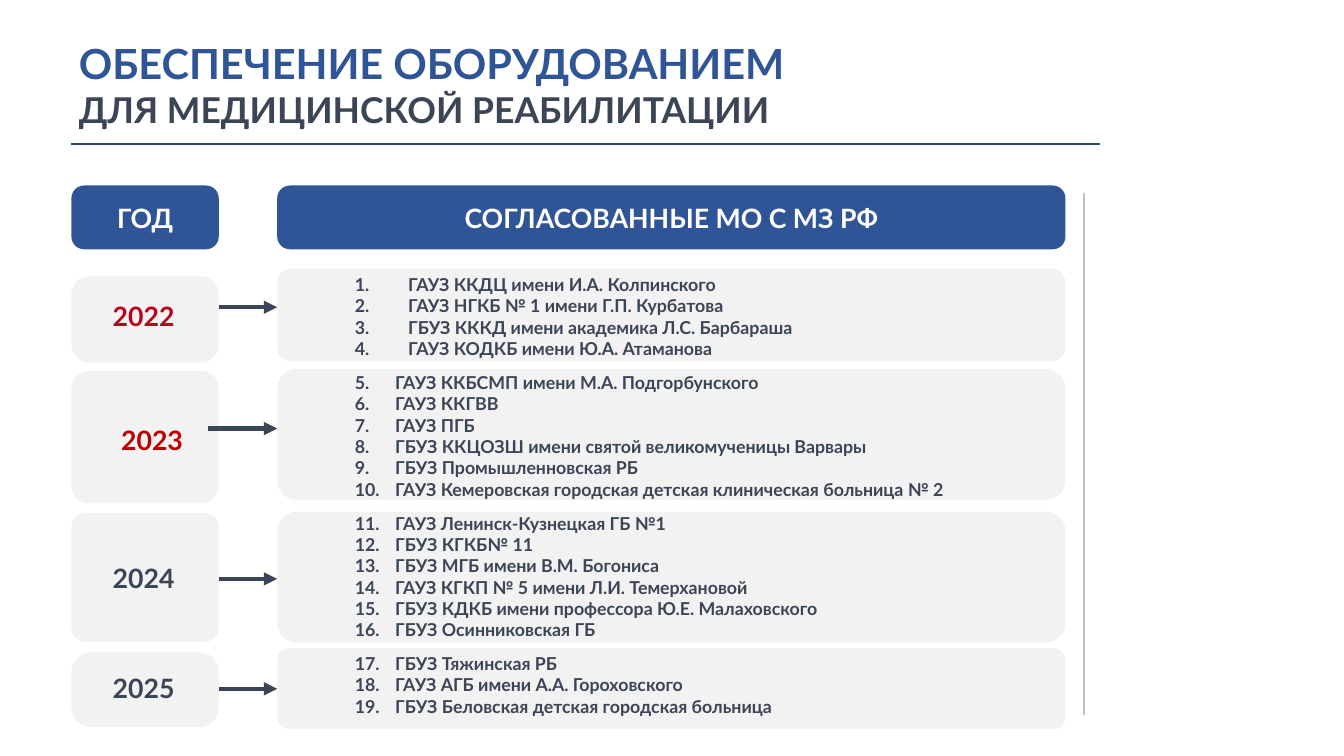
import pptx
import pptx.util
import pptx.dml.color
import pptx.enum.shapes
import pptx.enum.text
import pptx.oxml
import pptx.oxml.ns
import collections
import dataclasses

Cm, Pt = pptx.util.Cm, pptx.util.Pt
Align = pptx.enum.text.PP_ALIGN
Mid = pptx.enum.text.MSO_ANCHOR.MIDDLE


@dataclasses.dataclass
class Theme:
    font: str = "Lato"
    blue: str = "2F5597"
    rule: str = "284678"
    dark: str = "3B4555"
    red: str = "B9031D"
    brick: str = "BC0000"
    pale: str = "F2F2F2"
    gray: str = "BFBFBF"
    white: str = "FFFFFF"
    big: int = 28
    sub: int = 24
    head: int = 18
    item: int = 12


Row = collections.namedtuple("Row", "year color top high card tall round x y arrow over indent items")


def color(code):
    return pptx.dml.color.RGBColor.from_string(code)


def tag(parent, name, **attrs):
    node = pptx.oxml.ns.qn(name)
    return pptx.oxml.xmlchemy.etree.SubElement(parent, node, attrs)


def write(frame, text, size, ink, font, align=Align.LEFT, first=True, start=None, indent=0):
    """Add one bold paragraph, numbered when start is given."""
    para = frame.paragraphs[0] if first else frame.add_paragraph()
    para.alignment = align
    run = para.add_run()
    run.text = text
    run.font.name, run.font.size, run.font.bold = font, Pt(size), True
    run.font.color.rgb = color(ink)
    if start:
        props = para._p.get_or_add_pPr()
        props.set("marL", str(Cm(indent)))
        props.set("indent", str(-Cm(indent)))
        tag(props, "a:buFont", typeface="+mj-lt")
        tag(props, "a:buAutoNum", type="arabicPeriod", startAt=str(start))


class Page:
    def __init__(self, deck, theme):
        self.theme = theme
        self.shapes = deck.slides.add_slide(deck.slide_layouts[6]).shapes

    def card(self, x, y, w, h, fill, bend, text=None):
        kind = pptx.enum.shapes.MSO_SHAPE.ROUNDED_RECTANGLE
        shape = self.shapes.add_shape(kind, Cm(x), Cm(y), Cm(w), Cm(h))
        shape.adjustments[0] = bend
        shape.shadow.inherit = False
        shape.fill.solid()
        shape.fill.fore_color.rgb = color(fill)
        shape.line.fill.background()
        if text:
            shape.text_frame.vertical_anchor = Mid
            write(shape.text_frame, text, self.theme.head, self.theme.white,
                  self.theme.font, align=Align.CENTER)

    def line(self, x1, y1, x2, y2, ink, width, arrow=False):
        kind = pptx.enum.shapes.MSO_CONNECTOR.STRAIGHT
        line = self.shapes.add_connector(kind, Cm(x1), Cm(y1), Cm(x2), Cm(y2))
        line.line.color.rgb = color(ink)
        line.line.width = Pt(width)
        if arrow:
            tag(line.line._get_or_add_ln(), "a:tailEnd", type="triangle")
        tag(line._element.spPr, "a:effectLst")

    def text(self, x, y, w, h, lines, **form):
        """Each line is (text, size, colour); start numbers the lines."""
        frame = self.shapes.add_textbox(Cm(x), Cm(y), Cm(w), Cm(h)).text_frame
        frame.word_wrap = True
        for n, (words, size, ink) in enumerate(lines):
            write(frame, words, size, ink, self.theme.font, first=n == 0, **form)


THEME = Theme()
LEFT, YEAR_W = 1.7, 3.51
LIST_X, LIST_W = 6.6, 18.77
LINE_H, GAP = 0.508, 0.3

ROWS = [
    Row("2022", THEME.red, 6.4, 2.21, 6.58, 2.06, 0.21, 1.63, 7.01, 7.32, False, 1.27, [
        "ГАУЗ ККДЦ имени И.А. Колпинского",
        "ГАУЗ НГКБ № 1 имени Г.П. Курбатова",
        "ГБУЗ КККД имени академика Л.С. Барбараша",
        "ГАУЗ КОДКБ имени Ю.А. Атаманова"]),
    Row("2023", THEME.brick, 8.79, 3.12, 8.84, 3.15, 0.13, 1.83, 9.98, 10.21, True, 0.96, [
        "ГАУЗ ККБСМП имени М.А. Подгорбунского",
        "ГАУЗ ККГВВ",
        "ГАУЗ ПГБ",
        "ГБУЗ ККЦОЗШ имени святой великомученицы Варвары",
        "ГБУЗ Промышленновская РБ",
        "ГАУЗ Кемеровская городская детская клиническая больница № 2"]),
    Row("2024", THEME.dark, 12.19, 3.12, 12.22, 3.07, 0.11, 1.63, 13.26, 13.79, False, 0.96, [
        "ГАУЗ Ленинск-Кузнецкая ГБ №1",
        "ГБУЗ КГКБ№ 11",
        "ГБУЗ МГБ имени В.М. Богониса",
        "ГАУЗ КГКП № 5 имени Л.И. Темерхановой",
        "ГБУЗ КДКБ имени профессора Ю.Е. Малаховского",
        "ГБУЗ Осинниковская ГБ"]),
    Row("2025", THEME.dark, 15.44, 1.93, 15.54, 1.78, 0.26, 1.63, 15.88, 16.41, False, 0.96, [
        "ГБУЗ Тяжинская РБ",
        "ГАУЗ АГБ имени А.А. Гороховского",
        "ГБУЗ Беловская детская городская больница"]),
]


def main():
    deck = pptx.Presentation()
    deck.slide_width, deck.slide_height = Cm(32), Cm(18.01)
    page = Page(deck, THEME)

    # Title and rules
    page.text(1.63, 0.79, 29.18, 2.49, [
        ("ОБЕСПЕЧЕНИЕ ОБОРУДОВАНИЕМ", THEME.big, THEME.blue),
        ("ДЛЯ МЕДИЦИНСКОЙ РЕАБИЛИТАЦИИ", THEME.sub, THEME.dark)])
    page.line(LEFT, 3.43, 26.19, 3.43, THEME.rule, 1)
    page.line(25.81, 4.6, 25.81, 17.04, THEME.gray, 0.75)

    # Column heads
    for x, w, text in [(LEFT, YEAR_W, "ГОД"), (LIST_X, LIST_W, "СОГЛАСОВАННЫЕ МО С МЗ РФ")]:
        page.card(x, 4.42, w, 1.52, THEME.blue, 0.2, text)

    # One row per year: cards, arrow, year and numbered list
    start, top = 1, ROWS[0].top
    for row in ROWS:
        arrow = (4.95, row.arrow, LIST_X, row.arrow, THEME.dark, 3, True)
        page.card(LIST_X, row.top, LIST_W, row.high, THEME.pale, 0.15)
        if not row.over:
            page.line(*arrow)
        page.card(LEFT, row.card, YEAR_W, row.tall, THEME.pale, row.round)
        if row.over:
            page.line(*arrow)
        page.text(row.x, row.y, 3.58, 1.02, [(row.year, THEME.head, row.color)],
                  align=Align.CENTER)
        high = len(row.items) * LINE_H
        page.text(8.2, top, 16.21, high + 0.25,
                  [(item, THEME.item, THEME.dark) for item in row.items],
                  start=start, indent=row.indent)
        start += len(row.items)
        top += high + GAP

    deck.save("out.pptx")


if __name__ == "__main__":
    main()
